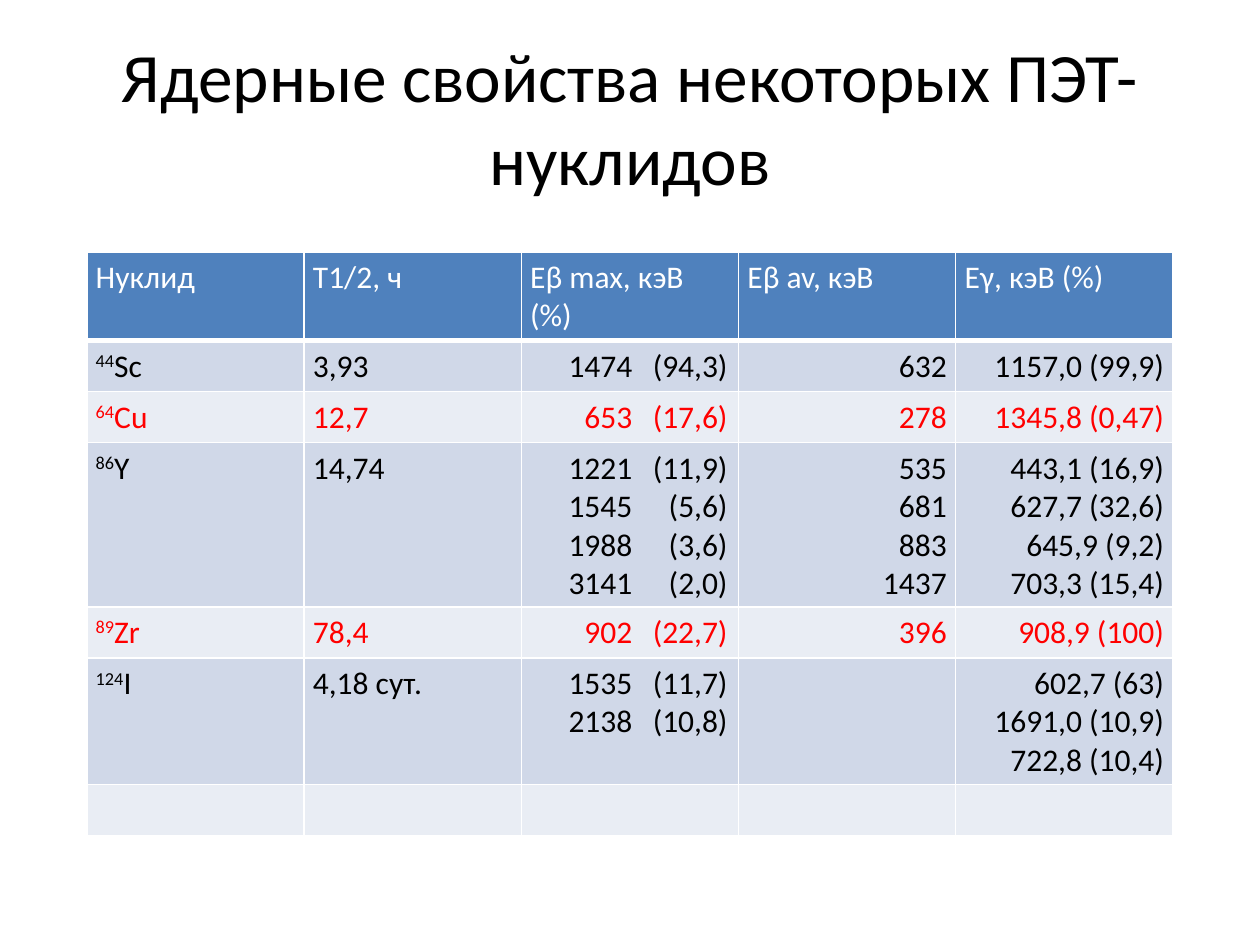
from lxml.etree import SubElement
from pptx import Presentation
from pptx.dml.color import RGBColor
from pptx.enum.text import MSO_ANCHOR, PP_ALIGN
from pptx.oxml.ns import qn
from pptx.util import Cm, Pt

COLORS = {
    "white": "FFFFFF",
    "black": "000000",
    "red": "FF0000",
    "header": "4F81BD",
    "odd": "D0D8E8",
    "even": "E9EDF4",
}
FONT = "Calibri"
HEADINGS = ["Нуклид", "T1/2, ч", "Eβ max, кэВ (%)", "Eβ av, кэВ", "Eγ, кэВ (%)"]
# Mass number, symbol, half-life, (max energy, share) pairs, mean energies, gamma lines
NUCLIDES = [
    ("44", "Sc", "3,93", [("1474", "94,3")], ["632"], ["1157,0 (99,9)"]),
    ("64", "Cu", "12,7", [("653", "17,6")], ["278"], ["1345,8 (0,47)"]),
    ("86", "Y", "14,74",
     [("1221", "11,9"), ("1545", "5,6"), ("1988", "3,6"), ("3141", "2,0")],
     ["535", "681", "883", "1437"],
     ["443,1 (16,9)", "627,7 (32,6)", "645,9 (9,2)", "703,3 (15,4)"]),
    ("89", "Zr", "78,4", [("902", "22,7")], ["396"], ["908,9 (100)"]),
    ("124", "I", "4,18 сут.", [("1535", "11,7"), ("2138", "10,8")], [],
     ["602,7 (63)", "1691,0 (10,9)", "722,8 (10,4)"]),
]
HIGHLIGHTED = {"Cu", "Zr"}
ROW_HEIGHT = Cm(1.03)
BETA_TABS = [Cm(2.06), Cm(3.98)]


def rgb(name):
    return RGBColor.from_string(COLORS[name])


def format_runs(frame, size, color):
    for para in frame.paragraphs:
        for span in para.runs:
            span.font.name = FONT
            span.font.size = Pt(size)
            span.font.bold = False
            span.font.color.rgb = rgb(color)


def add_right_tabs(para, positions):
    tabs = SubElement(para._p.get_or_add_pPr(), qn("a:tabLst"))
    for position in positions:
        SubElement(tabs, qn("a:tab"), pos=str(position), algn="r")


def style_cell(cell, fill, bottom=1):
    """Set margins, white borders and fill; borders must come before the fill."""
    cell.margin_left = cell.margin_right = Cm(0.18)
    cell.margin_top = cell.margin_bottom = Cm(0.13)
    properties = cell._tc.get_or_add_tcPr()
    for side, width in (("L", 1), ("R", 1), ("T", 1), ("B", bottom)):
        line = SubElement(properties, qn(f"a:ln{side}"), w=str(Pt(width)))
        solid = SubElement(line, qn("a:solidFill"))
        SubElement(solid, qn("a:srgbClr"), val=COLORS["white"])
    cell.fill.solid()
    cell.fill.fore_color.rgb = rgb(fill)


def fill_lines(cell, lines, align=PP_ALIGN.LEFT, tabs=()):
    cell.text_frame.text = "\n".join(lines)
    for para in cell.text_frame.paragraphs:
        para.alignment = align
        if tabs:
            add_right_tabs(para, tabs)


def fill_nuclide_row(cells, nuclide):
    mass, symbol, half_life, betas, means, gammas = nuclide
    para = cells[0].text_frame.paragraphs[0]
    for text in (mass, symbol):
        para.add_run().text = text
    para.runs[0]._r.get_or_add_rPr().set("baseline", "30000")
    fill_lines(cells[1], [half_life])
    fill_lines(cells[2], [f"\t{energy}\t({share})" for energy, share in betas],
               tabs=BETA_TABS)
    fill_lines(cells[3], means, PP_ALIGN.RIGHT)
    fill_lines(cells[4], gammas, PP_ALIGN.RIGHT)
    color = "red" if symbol in HIGHLIGHTED else "black"
    for cell in cells:
        format_runs(cell.text_frame, 18, color)


def add_title(page, left, top, width, height):
    frame = page.shapes.add_textbox(left, top, width, height).text_frame
    frame.word_wrap = True
    frame.vertical_anchor = MSO_ANCHOR.MIDDLE
    frame.text = "Ядерные свойства некоторых ПЭТ-нуклидов"
    frame.paragraphs[0].alignment = PP_ALIGN.CENTER
    format_runs(frame, 39.6, "black")


def add_nuclide_table(page, left, top, width, height):
    row_count = len(NUCLIDES) + 2  # header and an empty last row
    table = page.shapes.add_table(
        row_count, len(HEADINGS), left, top, width, height).table
    rows = [list(row.cells) for row in table.rows]
    for row in table.rows:
        row.height = ROW_HEIGHT

    for cell, heading in zip(rows[0], HEADINGS):
        style_cell(cell, "header", bottom=3)
        cell.text_frame.text = heading
        format_runs(cell.text_frame, 18, "white")
    for number, cells in enumerate(rows[1:], start=1):
        for cell in cells:
            style_cell(cell, "odd" if number % 2 else "even")
    for cells, nuclide in zip(rows[1:], NUCLIDES):
        fill_nuclide_row(cells, nuclide)


def main():
    deck = Presentation()
    deck.slide_width, deck.slide_height = Cm(25.4), Cm(19.05)
    page = deck.slides.add_slide(deck.slide_layouts[6])
    add_title(page, Cm(1.27), Cm(0.76), Cm(22.86), Cm(3.18))
    add_nuclide_table(page, Cm(1.75), Cm(5.08), Cm(21.9), Cm(11.73))
    deck.save("out.pptx")


if __name__ == "__main__":
    main()
